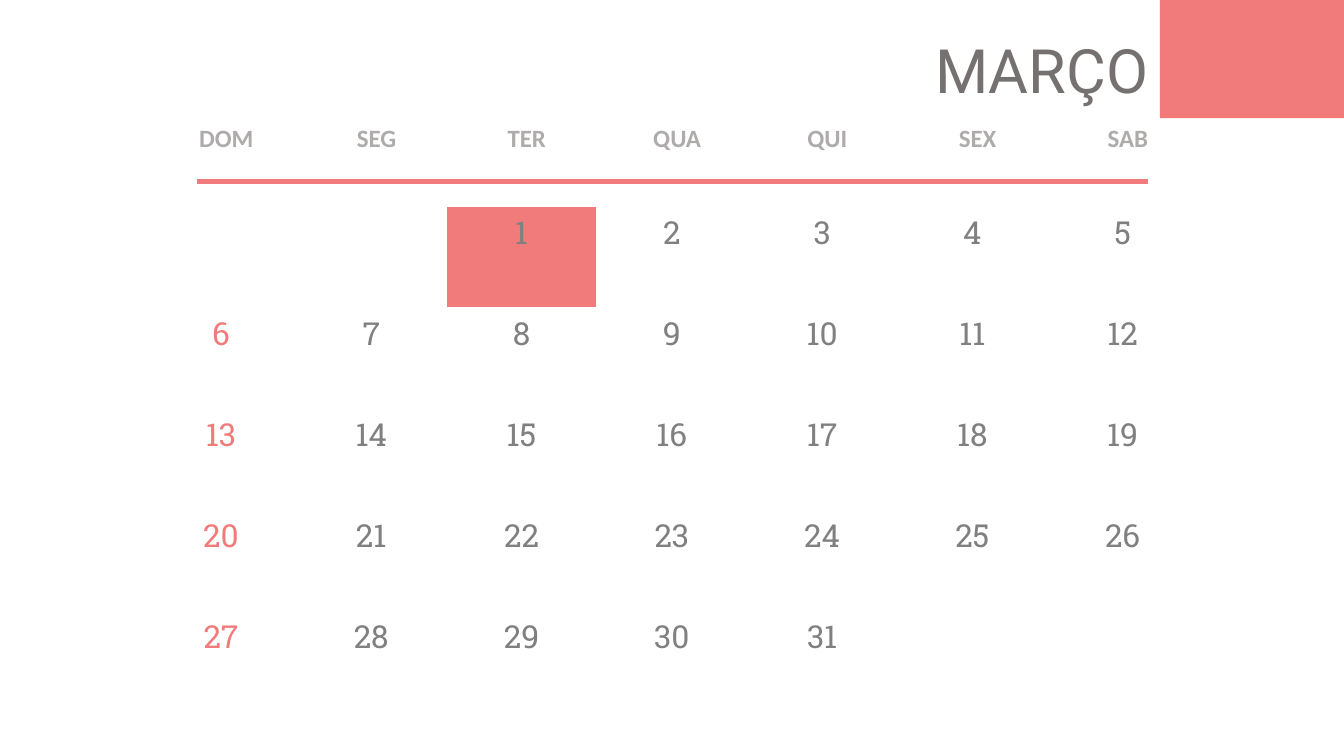
from dataclasses import dataclass

from lxml.etree import SubElement
from pptx import Presentation
from pptx.dml.color import RGBColor
from pptx.enum.shapes import MSO_CONNECTOR, MSO_SHAPE
from pptx.enum.text import MSO_ANCHOR, MSO_AUTO_SIZE, PP_ALIGN
from pptx.oxml.ns import qn
from pptx.util import Pt

PX = 4572  # 200 px to the inch
COLORS = {"coral": "F17B7B", "title": "767171", "head": "AFABAB",
          "day": "808080", "grid": "FFFFFF"}
DAYS = ["DOM", "SEG", "TER", "QUA", "QUI", "SEX", "SAB"]
START, LAST, WEEKS = 2, 31, 5  # the month starts on the third weekday
MARKED = 1


@dataclass(frozen=True)
class Style:
    font: str
    size: int
    color: str
    bold: bool = False
    pad: tuple[int, int, int, int] = (28, 12, 28, 12)


TITLE = Style("Roboto", 54, "title", pad=(20, 10, 20, 10))
HEAD = Style("Calibri", 22, "head", True, (26, 14, 0, 14))
DAY = Style("Roboto Slab", 28, "day")
SUNDAY = Style("Roboto Slab", 28, "coral")


def px(n: int) -> int:
    return n * PX


def rgb(name: str) -> RGBColor:
    return RGBColor.from_string(COLORS[name])


def write(frame, text: str, style: Style, align: PP_ALIGN) -> None:
    frame.text = text
    par = frame.paragraphs[0]
    par.alignment = align
    for run in par.runs:
        font = run.font
        font.name, font.size, font.bold = style.font, Pt(style.size), style.bold
        font.color.rgb = rgb(style.color)


def inset(box, style: Style) -> None:
    """Set the margins of a cell or a text frame."""
    (box.margin_left, box.margin_top,
     box.margin_right, box.margin_bottom) = map(px, style.pad)


def border(cell) -> None:
    props = cell._tc.get_or_add_tcPr()
    for at, side in enumerate(("lnL", "lnR", "lnT", "lnB")):
        line = props.makeelement(qn(f"a:{side}"), {"w": str(Pt(1))})
        fill = SubElement(line, qn("a:solidFill"))
        SubElement(fill, qn("a:srgbClr"), val=COLORS["grid"])
        props.insert(at, line)


def fill_cell(cell, text: str, style: Style, marked: bool = False) -> None:
    inset(cell, style)
    cell.vertical_anchor = MSO_ANCHOR.TOP
    if marked:
        cell.fill.solid()
        cell.fill.fore_color.rgb = rgb("coral")
    else:
        cell.fill.background()
    border(cell)
    if text:
        write(cell.text_frame, text, style, PP_ALIGN.CENTER)


def add_month(slide) -> None:
    """Add the table of weekdays and dates."""
    cols, head, week = len(DAYS), 218, 248
    wide = 369
    grid = slide.shapes.add_table(
        WEEKS + 1, cols, px(358), px(290),
        px(cols * wide), px(head + WEEKS * week)).table
    grid.horz_banding = False
    for col in grid.columns:
        col.width = px(wide)
    for i, row in enumerate(grid.rows):
        row.height = px(week if i else head)
    for col, name in enumerate(DAYS):
        fill_cell(grid.cell(0, col), name, HEAD)
    for slot in range(WEEKS * cols):
        row, col = divmod(slot, cols)
        day = slot - START + 1
        text = str(day) if 1 <= day <= LAST else ""
        fill_cell(grid.cell(row + 1, col), text,
                  DAY if col else SUNDAY, day == MARKED)


def add_title(slide, text: str) -> None:
    title = slide.shapes.title
    title.left, title.top, title.width, title.height = map(px, (2276, 70, 572, 202))
    frame = title.text_frame
    write(frame, text, TITLE, PP_ALIGN.LEFT)
    inset(frame, TITLE)
    frame.vertical_anchor = MSO_ANCHOR.TOP
    frame.word_wrap = False
    frame.auto_size = MSO_AUTO_SIZE.SHAPE_TO_FIT_TEXT


def add_rule(slide) -> None:
    rule = slide.shapes.add_connector(
        MSO_CONNECTOR.STRAIGHT, px(484), px(446), px(2818), px(446))
    rule.line.color.rgb = rgb("coral")
    rule.line.width = Pt(4.5)
    SubElement(rule._element.spPr, qn("a:effectLst"))


def add_block(slide) -> None:
    block = slide.shapes.add_shape(
        MSO_SHAPE.RECTANGLE, px(2848), 0, px(452), px(290))
    block.shadow.inherit = False
    block.fill.solid()
    block.fill.fore_color.rgb = rgb("coral")
    block.line.fill.background()


def main() -> None:
    deck = Presentation()
    deck.slide_width, deck.slide_height = px(3300), px(1800)
    slide = deck.slides.add_slide(deck.slide_layouts.get_by_name("Title Only"))
    add_month(slide)
    add_title(slide, "MARÇO")
    add_rule(slide)
    add_block(slide)
    deck.save("out.pptx")


if __name__ == "__main__":
    main()
